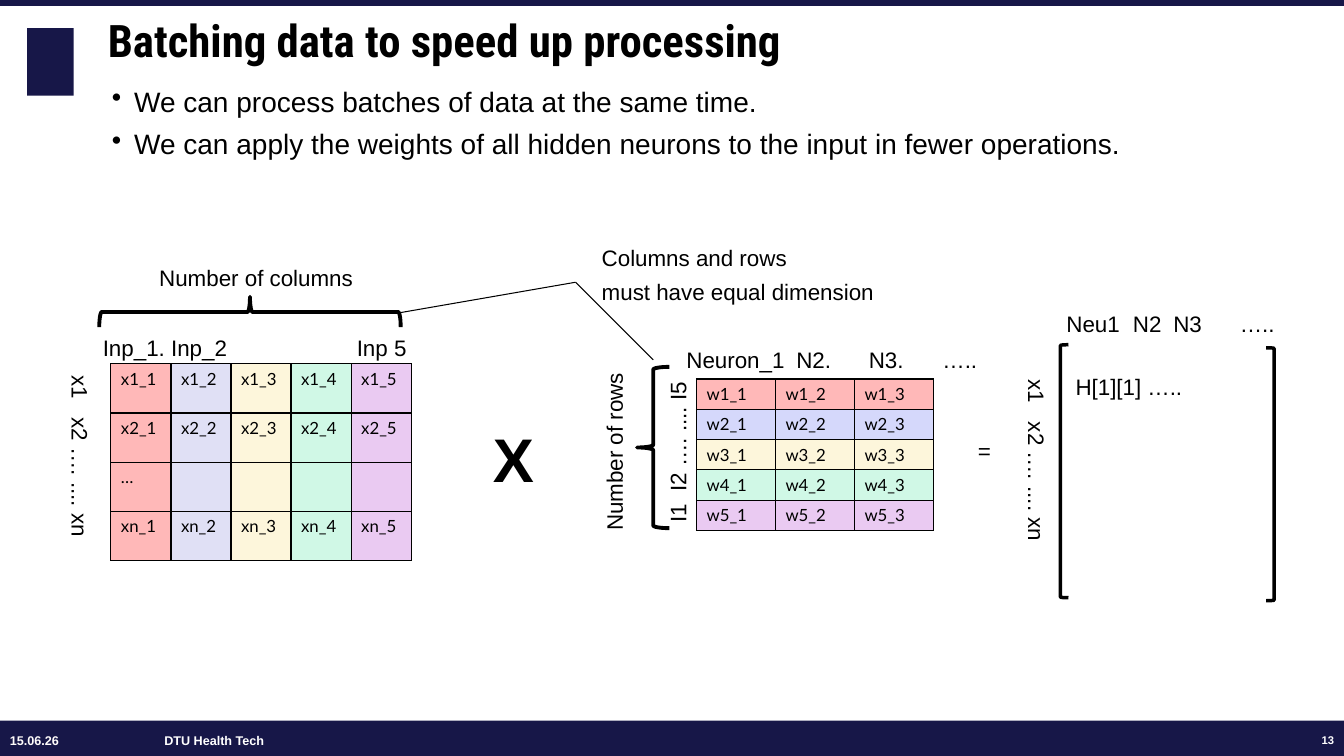
from lxml.etree import SubElement as Sub
from pptx import Presentation
from pptx.dml.color import RGBColor as RGB
from pptx.enum.shapes import MSO_CONNECTOR as Conn, MSO_SHAPE as Kind
from pptx.enum.text import MSO_ANCHOR as Anchor, PP_ALIGN as Align
from pptx.oxml.ns import qn
from pptx.util import Inches, Pt

HEX = {
    "navy": "171748", "white": "FFFFFF", "cream": "FFFCFB", "black": "000000",
    "red": "FFB8B8", "lilac": "E0E0F5", "blue": "D5D8FB",
    "sand": "FDF6DB", "mint": "D0F8E6", "plum": "EACAF2",
}
COLS, ROWS = 80, 45  # slide grid
LINE = 1.62          # rows taken by one line of label text

deck = Presentation()
deck.slide_width, deck.slide_height = Inches(13.33), Inches(7.5)
page = deck.slides.add_slide(deck.slide_layouts[6])


def hue(name):
    return RGB.from_string(HEX[name])


def grid(cols, rows):
    return int(cols * deck.slide_width / COLS), int(rows * deck.slide_height / ROWS)


def spot(box, col, row, wide, high):
    """Place a cell span, counted from the corner of a region."""
    return *grid(box[0] + col, box[1] + row), *grid(wide, high)


def text(at, lines, size=16, bold=False, font="Arial", ink="black", turn=0,
         anchor=Anchor.TOP, align=Align.LEFT, pad=0, tabs=(), dots=False,
         gap=4.3, lead=1.05):
    item = page.shapes.add_textbox(*at)
    item.rotation = turn
    frame = item.text_frame
    frame.word_wrap = True
    frame.vertical_anchor = anchor
    frame.margin_left = frame.margin_right = Inches(pad)
    frame.margin_top = frame.margin_bottom = 0
    for i, line in enumerate(lines):
        para = frame.paragraphs[0] if i == 0 else frame.add_paragraph()
        props = para._p.get_or_add_pPr()
        if dots:
            props.set("marL", str(Inches(0.22)))
            props.set("indent", str(-Inches(0.22)))
            Sub(props, qn("a:buChar"), char="•")
        if tabs:
            stops = Sub(props, qn("a:tabLst"))
            for tab in tabs:
                Sub(stops, qn("a:tab"), pos=str(grid(tab, 0)[0]), algn="l")
        para.alignment = align
        para.line_spacing = lead
        if i:
            para.space_before = Pt(gap)
        style(para.add_run(), line, size, font, ink, bold)


def style(run, words, size, font, ink="black", bold=False):
    run.text = words
    run.font.size, run.font.name, run.font.bold = Pt(size), font, bold
    run.font.color.rgb = hue(ink)


def block(at):
    item = page.shapes.add_shape(Kind.RECTANGLE, *at)
    item.shadow.inherit = False
    item.fill.solid()
    item.fill.fore_color.rgb = hue("navy")
    item.line.fill.background()


def brace(kind, at, width, turn=0):
    item = page.shapes.add_shape(kind, *at)
    item.shadow.inherit = False
    item.rotation = turn
    item.fill.background()
    item.line.color.rgb = hue("black")
    item.line.width = Pt(width)


def table(at, words, tint):
    """Fill a bordered table; tint gives the colour of a row and column."""
    rows, cols = len(words), len(words[0])
    body = page.shapes.add_table(rows, cols, *at).table
    body.first_row = body.horz_banding = False
    for r, line in enumerate(words):
        for c, word in enumerate(line):
            cell = body.cell(r, c)
            style(cell.text_frame.paragraphs[0].add_run(), word, 12, "Lato")
            props = cell._tc.get_or_add_tcPr()
            for side in "LRTB":
                edge = Sub(props, qn("a:ln" + side), w=str(Pt(1)))
                fill = Sub(edge, qn("a:solidFill"))
                Sub(fill, qn("a:srgbClr"), val=HEX["black"])
            cell.fill.solid()
            cell.fill.fore_color.rgb = hue(tint(r, c))


def frame(box):
    # Bars and emblem block
    block(spot(box, 0, 42.9, COLS, 2.1))
    block(spot(box, 0, 0, COLS, 0.36))
    block(spot(box, 1.62, 1.68, 2.76, 4.02))
    # Footer texts
    foot = dict(size=9, bold=True, anchor=Anchor.MIDDLE, lead=1)
    text(spot(box, 9.78, 43.08, 22.3, 2.04), ["DTU Health Tech"], ink="white", **foot)
    text(spot(box, 0, 43.02, 9.5, 2.1), ["15.06.26"], ink="cream", pad=0.1, **foot)
    foot["size"] = 8
    text(spot(box, 76.2, 43.02, 3.8, 2.1), ["13"], ink="white", pad=0.1,
         align=Align.RIGHT, **foot)


def intro(box):
    text(spot(box, 0, 0, 69.5, 3.96), ["Batching data to speed up processing"],
         size=32, bold=True, font="Roboto Condensed", anchor=Anchor.BOTTOM, lead=1)
    text(spot(box, 0.24, 4.92, 69.5, 35.9), [
        "We can process batches of data at the same time.",
        "We can apply the weights of all hidden neurons to the input in fewer operations.",
    ], size=20, dots=True, gap=5)


def samples(at):
    text(at, ["x1\tx2 …. .... xn"], turn=90, tabs=[2.52])


def inputs(box):
    # Column count with its brace
    text(spot(box, 3.48, 0.66, 12.5, LINE), ["Number of columns"])
    brace(Kind.RIGHT_BRACE, spot(box, 7.98, -5.4, 1.8, 17.94), 2.75, 270)
    # Headings and table
    text(spot(box, 0.12, 4.8, 18.8, LINE), ["Inp_1. Inp_2\tInp 5"], tabs=[15.12])
    samples(spot(box, -6.66, 12.06, 11.04, LINE))
    words = [[f"{x}_{n}" for n in range(1, 6)] for x in ("x1", "x2", "xn")]
    words.insert(2, ["…", "", "", "", ""])
    tints = ["red", "lilac", "sand", "mint", "plum"]
    table(spot(box, 0.6, 6.66, 17.88, 11.7), words, lambda r, c: tints[c])


def weights(box):
    # Row count with its brace
    text(spot(box, -4.98, 11.32, 10.92, LINE), ["Number of rows"], turn=270)
    brace(Kind.LEFT_BRACE, spot(box, 1.92, 7.84, 1.92, 9.6), 2.75)
    # Headings and table
    text(spot(box, 4.86, 6.52, 18, LINE), ["Neuron_1\tN2.\tN3.\t….."],
         tabs=[6.54, 10.86, 15.24])
    text(spot(box, -0.3, 11.74, 9.12, LINE), ["I1\tI2 …. .... I5"],
         turn=270, tabs=[1.86])
    words = [[f"w{r}_{c}" for c in range(1, 4)] for r in range(1, 6)]
    tints = ["red", "blue", "sand", "mint", "plum"]
    table(spot(box, 5.46, 8.56, 14.1, 9), words, lambda r, c: tints[r])
    # Note on the shared dimension
    text(spot(box, -0.18, 0.46, 18, 3.54),
         ["Columns and rows", "must have equal dimension"])


def result(box):
    text(spot(box, 6.48, 0.36, 13, LINE), ["Neu1\tN2\tN3\t….."],
         tabs=[3.96, 6.36, 10.32])
    samples(spot(box, -0.72, 9.3, 11.04, LINE))
    text(spot(box, 7.02, 4.14, 7, LINE), ["H[1][1] ….."])
    brace(Kind.LEFT_BRACKET, spot(box, 6.12, 2.52, 0.48, 15.06), 2.5)
    brace(Kind.RIGHT_BRACKET, spot(box, 18.36, 2.7, 0.48, 15.06), 2.5)


def links(box):
    # Signs between the matrices
    text(spot(box, 29.34, 24.84, 3, 4.44), ["X"], size=44, bold=True)
    text(spot(box, 58.2, 25.92, 1, LINE), ["="])
    # Lines from both braces to the note
    peak = spot(box, 34.26, 16.8, 0, 0)[:2]
    for end in ((23.88, 18.6), (38.88, 21.42)):
        line = page.shapes.add_connector(Conn.STRAIGHT, *spot(box, *end, 0, 0)[:2], *peak)
        line.line.color.rgb = hue("black")
        line.line.width = Pt(0.75)
        Sub(line._element.spPr, qn("a:effectLst"))


if __name__ == "__main__":
    frame((0, 0))
    intro((6.42, 0))
    inputs((6, 15))
    weights((36, 14))
    result((57, 18))
    links((0, 0))
    deck.save("out.pptx")
